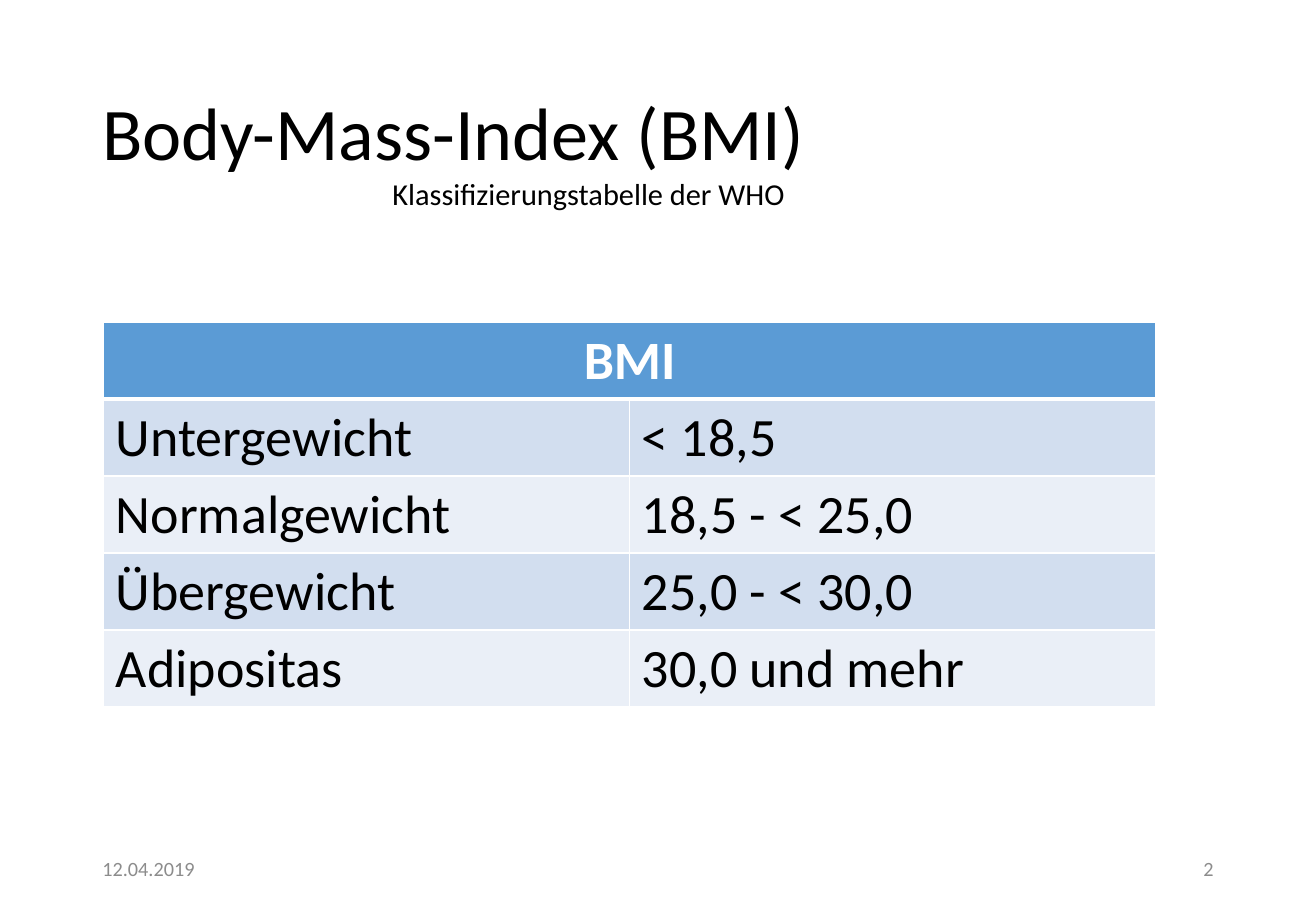
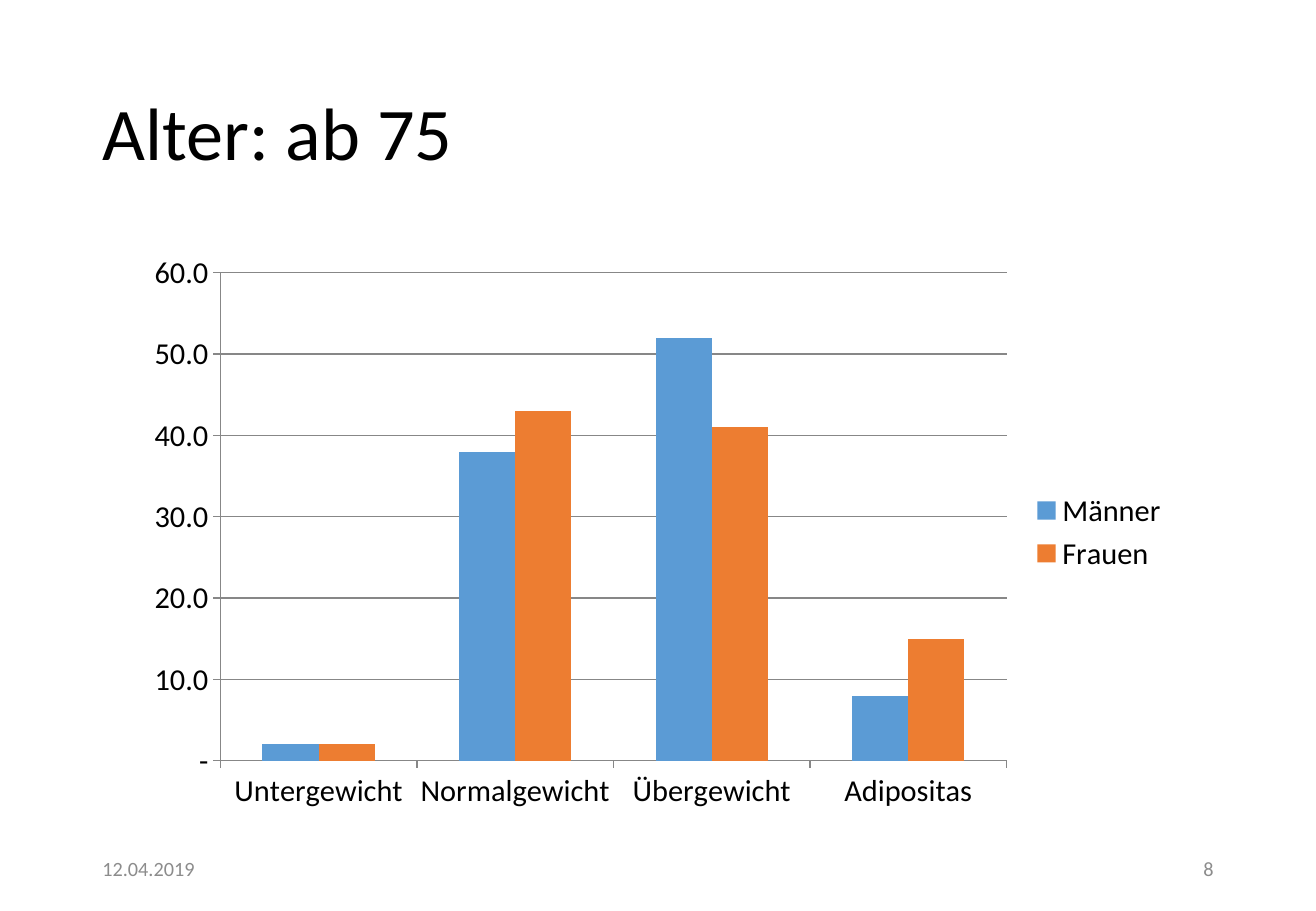
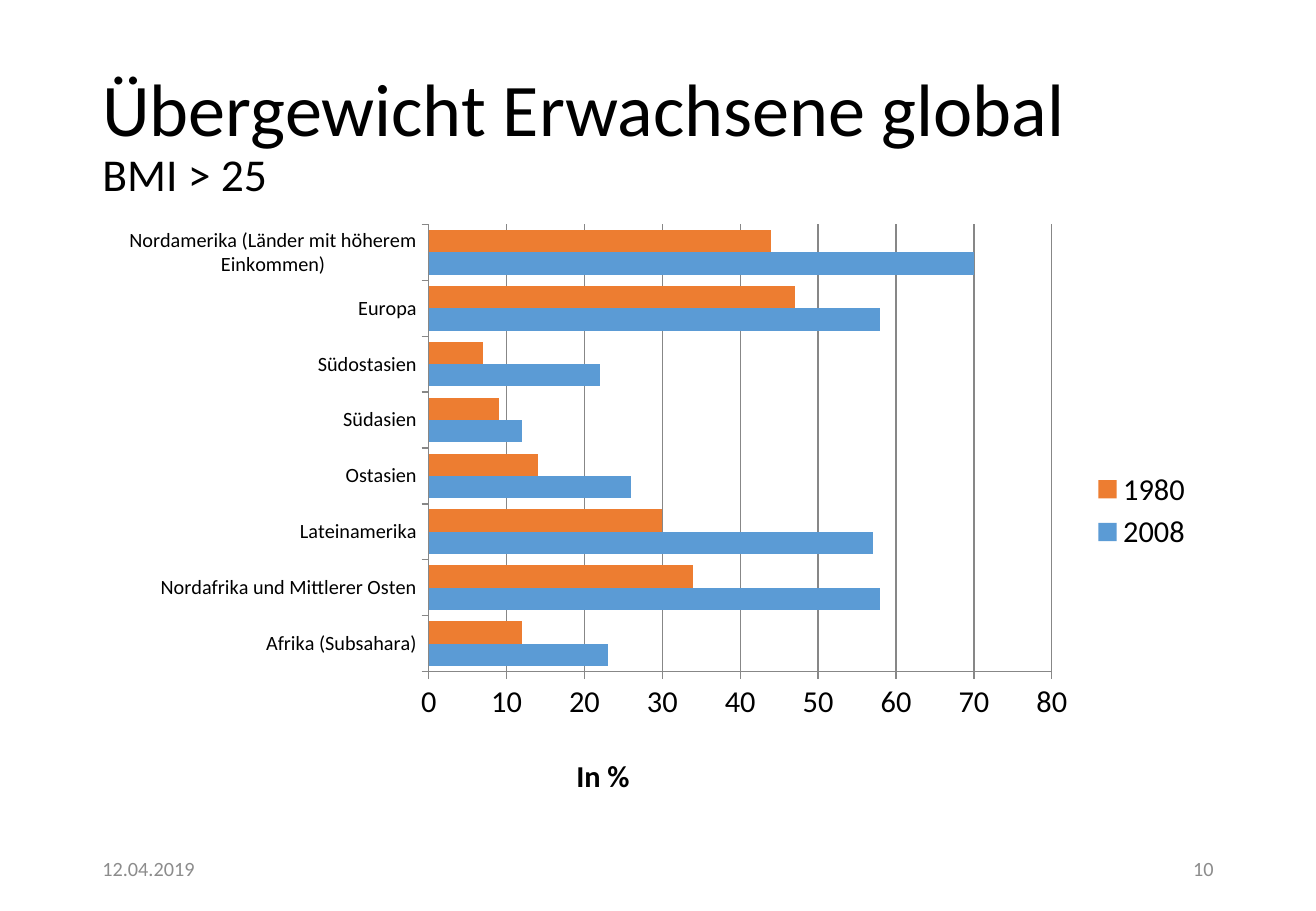
from lxml.etree import SubElement
from pptx import Presentation
from pptx.chart.data import CategoryChartData as ChartData
from pptx.dml.color import RGBColor
from pptx.enum.chart import XL_CHART_TYPE as ChartType
from pptx.enum.chart import XL_LEGEND_POSITION as LegendPosition
from pptx.enum.chart import XL_TICK_MARK as TickMark
from pptx.enum.text import MSO_ANCHOR as Anchor
from pptx.enum.text import PP_ALIGN as Align
from pptx.oxml.ns import qn
from pptx.util import Pt

WIDTH, HEIGHT = 780, 540
MARGIN = 53.6
CONTENT_WIDTH = WIDTH - 2 * MARGIN
FOOTER_WIDTH = 175.5
FONT = "Calibri"
BLACK, WHITE, GREY, LINE = "000000", "FFFFFF", "8C8C8C", "878787"
BLUE, ORANGE = "5B9BD5", "ED7D31"
BANDS = ["D2DEEF", "EAEFF7"]
DATE = "12.04.2019"


def color(value):
    return RGBColor.from_string(value)


def style_font(font, size, fill=BLACK, bold=False):
    font.name, font.size, font.bold = FONT, Pt(size), bold
    font.color.rgb = color(fill)


def set_border(cell, side, width):
    line = SubElement(cell._tc.get_or_add_tcPr(), qn(f"a:ln{side}"), w=str(Pt(width)))
    fill = SubElement(line, qn("a:solidFill"))
    SubElement(fill, qn("a:srgbClr"), val=WHITE)


def place(element, target=None, **fractions):
    layout = element.find(qn("c:layout"))
    if layout is None:
        layout = element.makeelement(qn("c:layout"), {})
        overlay = element.find(qn("c:overlay"))
        if overlay is not None:
            overlay.addprevious(layout)
        elif target:
            element.insert(0, layout)
        else:
            element.append(layout)
    manual = SubElement(layout, qn("c:manualLayout"))
    if target:
        SubElement(manual, qn("c:layoutTarget"), val=target)
    for name in ("x", "y"):
        SubElement(manual, qn(f"c:{name}Mode"), val="edge")
    for name, value in fractions.items():
        SubElement(manual, qn(f"c:{name}"), val=str(value))


class Report:
    """Builds the slides of the BMI report in one shared style."""

    def __init__(self):
        self.deck = Presentation()
        self.deck.slide_width, self.deck.slide_height = Pt(WIDTH), Pt(HEIGHT)
        self.page = None

    def add_page(self, title, number, second_line=None):
        self.page = self.deck.slides.add_slide(self.deck.slide_layouts[6])
        heading = self.add_text(title, MARGIN, 28.8, CONTENT_WIDTH, 104.4, 44, anchor=Anchor.MIDDLE)
        heading.line_spacing = 0.9
        if second_line:
            heading.add_line_break()
            span = heading.add_run()
            span.text = second_line
            span.font.size = Pt(27)
        right = WIDTH - MARGIN - FOOTER_WIDTH
        for text, left, align in ((DATE, MARGIN, Align.LEFT), (str(number), right, Align.RIGHT)):
            self.add_text(text, left, 500.5, FOOTER_WIDTH, 28.8, 12, GREY, align, Anchor.MIDDLE)

    def add_text(self, text, left, top, width, height, size,
                 fill=BLACK, align=Align.LEFT, anchor=Anchor.TOP):
        box = self.page.shapes.add_textbox(Pt(left), Pt(top), Pt(width), Pt(height))
        frame = box.text_frame
        frame.word_wrap, frame.vertical_anchor = True, anchor
        para = frame.paragraphs[0]
        para.alignment = align
        para.add_run().text = text
        style_font(para.font, size, fill)
        return para

    def add_table(self, header, rows, left, top, width, row_height):
        count = len(rows) + 1
        shape = self.page.shapes.add_table(
            count, 2, Pt(left), Pt(top), Pt(width), Pt(count * row_height))
        table = shape.table
        table.horz_banding = False
        for index, values in enumerate([(header, ""), *rows]):
            is_header = index == 0
            fill = BLUE if is_header else BANDS[(index - 1) % 2]
            for cell, text in zip(table.rows[index].cells, values):
                for side in "LRTB":
                    thick = (index, side) in ((0, "B"), (1, "T"))
                    set_border(cell, side, 3 if thick else 1)
                cell.fill.solid()
                cell.fill.fore_color.rgb = color(fill)
                cell.text = text
                para = cell.text_frame.paragraphs[0]
                para.alignment = Align.CENTER if is_header else Align.LEFT
                style_font(para.font, 32, WHITE if is_header else BLACK, is_header)
        table.cell(0, 0).merge(table.cell(0, 1))

    def add_chart(self, kind, frame, categories, series, gap, maximum,
                  number_format="General", label_size=18):
        data = ChartData()
        data.categories = categories
        for name, values in series.items():
            data.add_series(name, values)
        chart = self.page.shapes.add_chart(kind, *map(Pt, frame), data).chart
        style_font(chart.font, 18)
        chart.has_title = False
        chart.has_legend = True
        chart.legend.position = LegendPosition.RIGHT
        chart.legend.include_in_layout = False
        plot = chart.plots[0]
        plot.gap_width, plot.overlap, plot.vary_by_categories = gap, 0, False
        for item, fill in zip(plot.series, (BLUE, ORANGE)):
            item.format.fill.solid()
            item.format.fill.fore_color.rgb = color(fill)
        values = chart.value_axis
        values.minimum_scale, values.maximum_scale, values.major_unit = 0, maximum, 10
        values.has_major_gridlines = True
        values.tick_labels.number_format = number_format
        values.tick_labels.number_format_is_linked = False
        style_font(chart.category_axis.tick_labels.font, label_size)
        for axis in (chart.category_axis, values):
            axis.major_tick_mark = TickMark.OUTSIDE
        for part in (chart.category_axis, values, values.major_gridlines):
            part.format.line.color.rgb = color(LINE)
            part.format.line.width = Pt(0.75)
        return chart


def main():
    report = Report()
    classes = ["Untergewicht", "Normalgewicht", "Übergewicht", "Adipositas"]
    limits = ["< 18,5", "18,5 - < 25,0", "25,0 - < 30,0", "30,0 und mehr"]

    report.add_page("Body-Mass-Index (BMI)", 2)
    report.add_table("BMI", list(zip(classes, limits)), 61.5, 191, 623.5, 45.6)
    report.add_text("Klassifizierungstabelle der WHO", 225.5, 100, 351, 29, 18)

    report.add_page("Alter: ab 75", 8)
    report.add_chart(
        ChartType.COLUMN_CLUSTERED, (79.2, 144, 620.6, 342.7), classes,
        {"Männer": [2, 38, 52, 8], "Frauen": [2, 43, 41, 15]},
        gap=150, maximum=60, number_format='#,##0.0;#,##0.0;"-"')

    report.add_page("Übergewicht Erwachsene global", 10, "BMI > 25")
    regions = ["Afrika (Subsahara)", "Nordafrika und Mittlerer Osten", "Lateinamerika",
               "Ostasien", "Südasien", "Südostasien", "Europa",
               "Nordamerika (Länder mit höherem Einkommen)"]
    chart = report.add_chart(
        ChartType.BAR_CLUSTERED, (66.2, 126, 648, 353.5), regions,
        {"2008": [23, 58, 57, 26, 12, 22, 58, 70], "1980": [12, 34, 30, 14, 9, 7, 47, 44]},
        gap=50, maximum=80, label_size=12)
    title = chart.value_axis.axis_title
    para = title.text_frame.paragraphs[0]
    para.add_run().text = "In %"
    style_font(para.font, 18, bold=True)
    place(title._element, x=0.42, y=0.9)
    plot_area = chart._chartSpace.chart.plotArea
    place(plot_area, "inner", x=0.29, y=0.02, w=0.57, h=0.75)

    report.deck.save("out.pptx")


if __name__ == "__main__":
    main()
